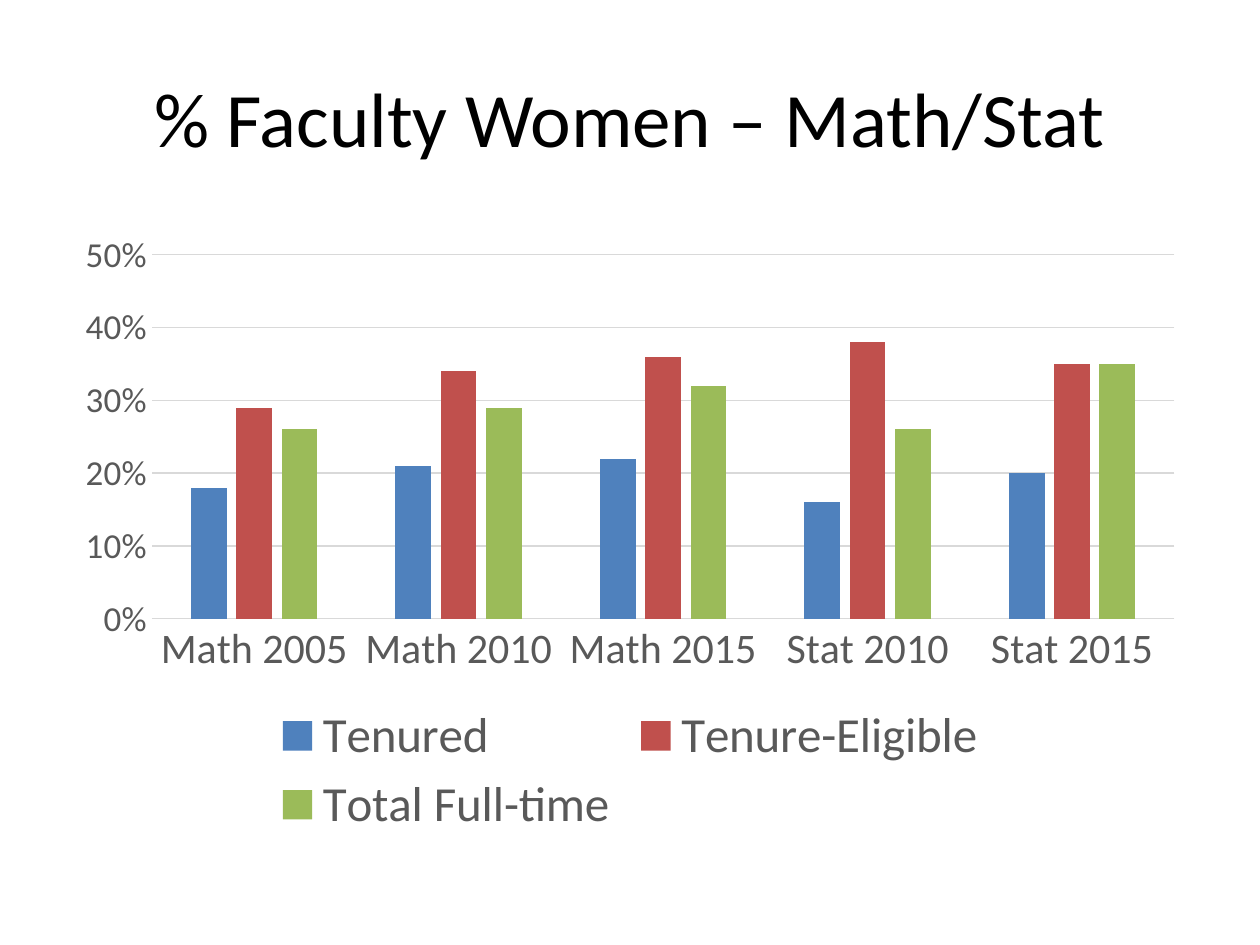
from pptx import Presentation
from pptx.chart.data import CategoryChartData
from pptx.dml.color import RGBColor
from pptx.enum.chart import XL_CHART_TYPE, XL_LEGEND_POSITION, XL_TICK_MARK
from pptx.enum.text import MSO_ANCHOR, PP_ALIGN
from pptx.util import Pt

COLUMNS = XL_CHART_TYPE.COLUMN_CLUSTERED
BOTTOM = XL_LEGEND_POSITION.BOTTOM
NO_TICK = XL_TICK_MARK.NONE
MIDDLE = MSO_ANCHOR.MIDDLE
CENTER = PP_ALIGN.CENTER

FONT = "Calibri"
COLORS = {
    "title": "000000",
    "label": "595959",
    "line": "D9D9D9",
    "Tenured": "4F81BD",
    "Tenure-Eligible": "C0504D",
    "Total Full-time": "9BBB59",
}
CATEGORIES = ["Math 2005", "Math 2010", "Math 2015", "Stat 2010", "Stat 2015"]
SHARES = {
    "Tenured": [0.18, 0.21, 0.22, 0.16, 0.20],
    "Tenure-Eligible": [0.29, 0.34, 0.36, 0.38, 0.35],
    "Total Full-time": [0.26, 0.29, 0.32, 0.26, 0.35],
}


def style_font(font, size, color):
    font.name = FONT
    font.size = Pt(size)
    font.color.rgb = RGBColor.from_string(COLORS[color])


def add_text(page, text, *, left, top, width, height, size, color):
    box = page.shapes.add_textbox(Pt(left), Pt(top), Pt(width), Pt(height))
    frame = box.text_frame
    frame.word_wrap = True
    frame.vertical_anchor = MIDDLE
    para = frame.paragraphs[0]
    para.alignment = CENTER
    span = para.add_run()
    span.text = text
    style_font(span.font, size, color)


deck = Presentation()
deck.slide_width, deck.slide_height = Pt(720), Pt(540)
page = deck.slides.add_slide(deck.slide_layouts[6])

add_text(page, "% Faculty Women – Math/Stat", left=36, top=21.6,
         width=648, height=90, size=44, color="title")

data = CategoryChartData(number_format="0%")
data.categories = CATEGORIES
for name, values in SHARES.items():
    data.add_series(name, values)
chart = page.shapes.add_chart(COLUMNS, Pt(36), Pt(126), Pt(648), Pt(356.4), data).chart
chart.has_title = False
style_font(chart.font, 10, "title")

plot = chart.plots[0]
plot.gap_width = 219
plot.overlap = -27
plot.vary_by_categories = False
for series in plot.series:
    series.format.fill.solid()
    series.format.fill.fore_color.rgb = RGBColor.from_string(COLORS[series.name])

category_axis, value_axis = chart.category_axis, chart.value_axis
for axis, size in ((category_axis, 24), (value_axis, 20)):
    axis.major_tick_mark = NO_TICK
    axis.minor_tick_mark = NO_TICK
    style_font(axis.tick_labels.font, size, "label")

value_axis.minimum_scale = 0
value_axis.maximum_scale = 0.5
value_axis.major_unit = 0.1
value_axis.tick_labels.number_format = "0%"
value_axis.tick_labels.number_format_is_linked = False
value_axis.format.line.fill.background()
for line in (category_axis.format.line, value_axis.major_gridlines.format.line):
    line.width = Pt(0.75)
    line.color.rgb = RGBColor.from_string(COLORS["line"])

chart.has_legend = True
chart.legend.position = BOTTOM
chart.legend.include_in_layout = False
style_font(chart.legend.font, 28, "label")

deck.save("out.pptx")
